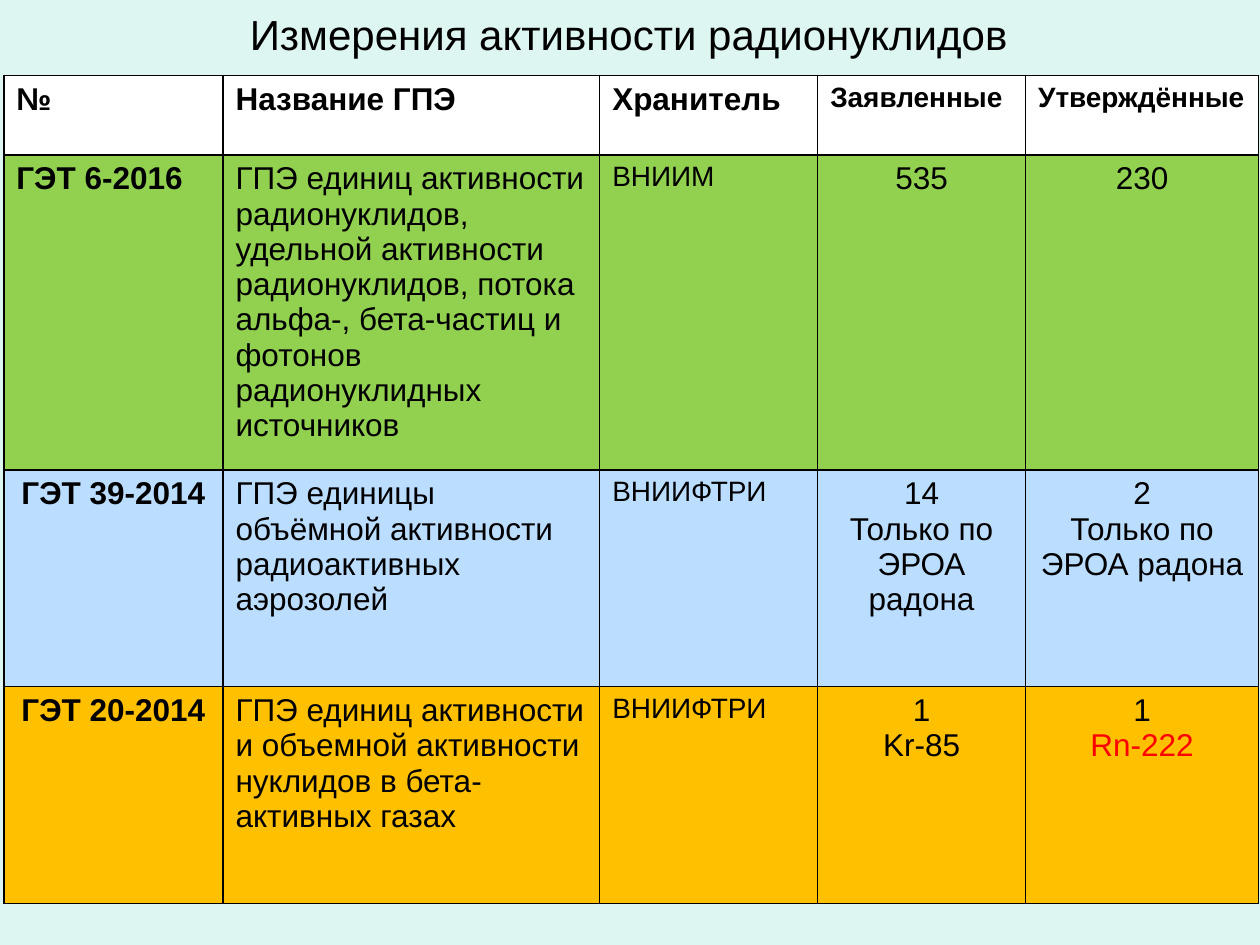
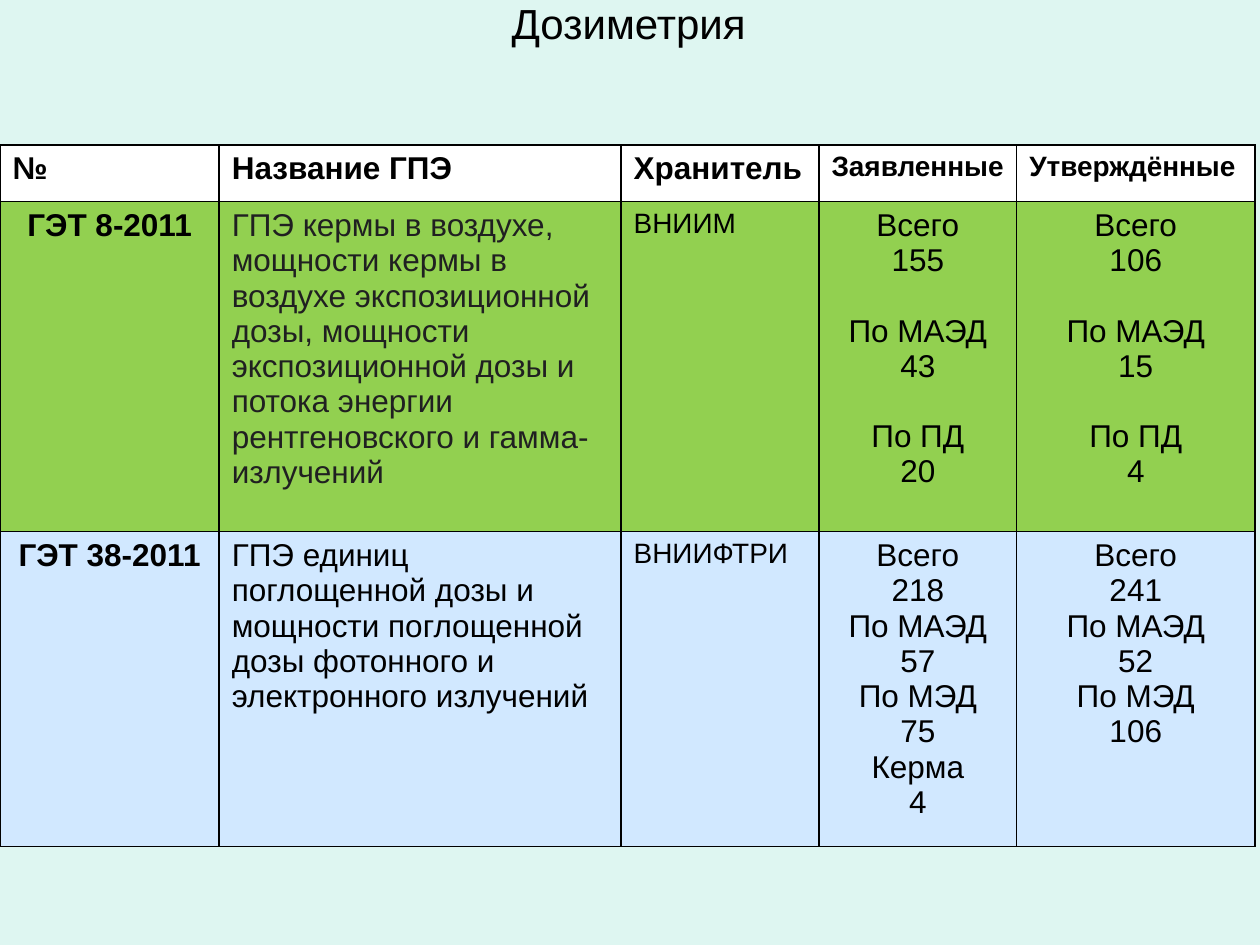
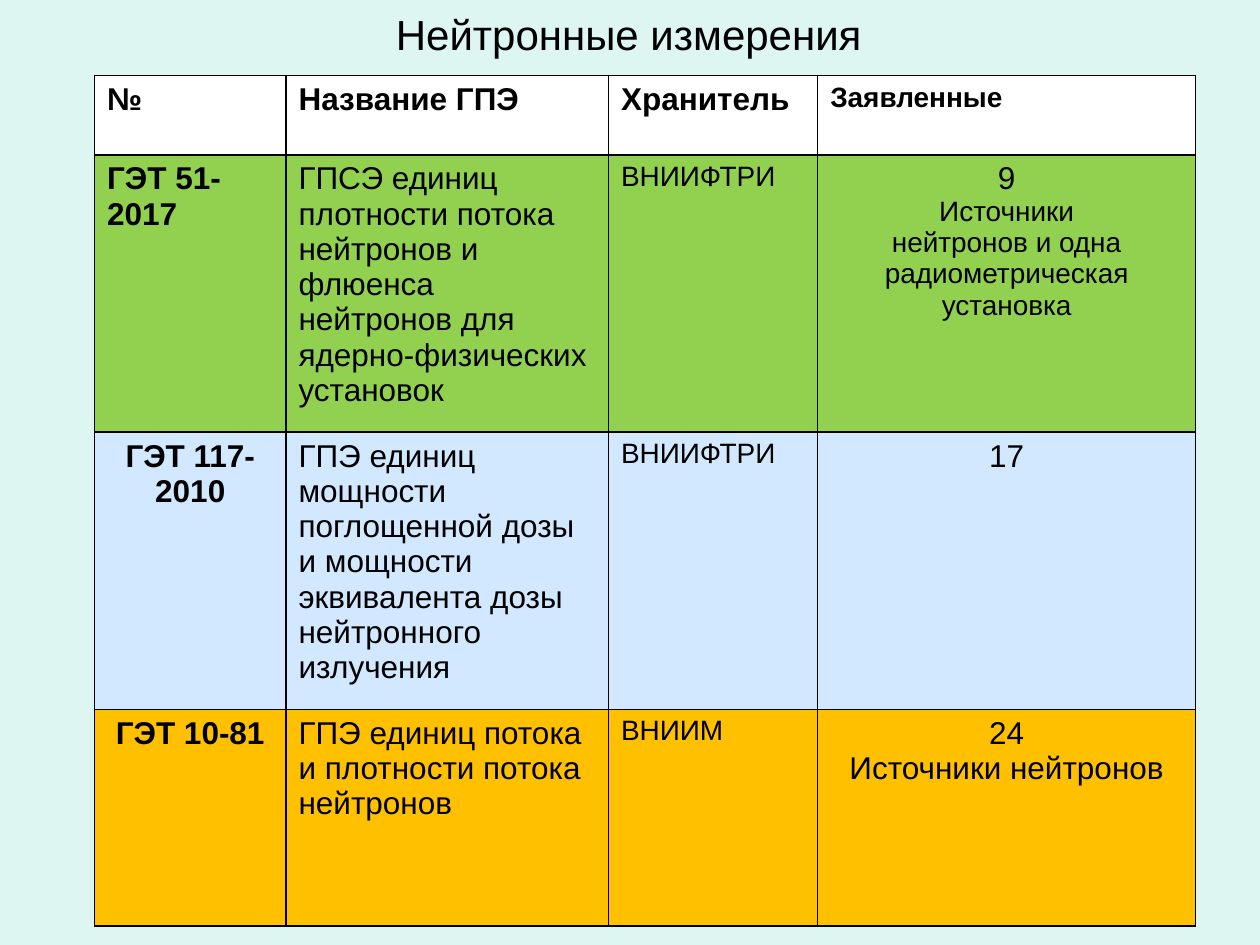
from dataclasses import dataclass
from lxml.etree import SubElement as Sub
from pptx import Presentation as Pres
from pptx.dml.color import RGBColor as Rgb
from pptx.enum.text import MSO_ANCHOR as Anchor, PP_ALIGN as Align
from pptx.oxml.ns import qn
from pptx.util import Inches, Pt


@dataclass(frozen=True)
class Theme:
    font: str = "Arial"
    back: str = "DEF6F1"
    ink: str = "000000"
    soft: str = "202021"
    red: str = "FF0000"
    white: str = "FFFFFF"
    green: str = "92D050"
    blue: str = "BBDDFF"
    pale: str = "D1E8FF"
    gold: str = "FFC000"
    title: int = 24
    text: int = 18
    small: int = 16
    gap: int = 20
    edge: int = 1


T = Theme()
COLS, ROWS = 100, 75
HEADS = ["№", "Название ГПЭ", "Хранитель", "Заявленные", "Утверждённые"]


def write(frame, text, size=T.text, ink=T.ink, bold=False, align=Align.LEFT, gap=0):
    lines = text if isinstance(text, list) else [text]
    for i, line in enumerate(lines):
        words, own = line if isinstance(line, tuple) else (line, {})
        para = frame.paragraphs[0] if i == 0 else frame.add_paragraph()
        para.alignment = align
        if own.get("gap", gap):
            para.space_before = Pt(own.get("gap", gap))
        run = para.add_run()
        run.text = words
        font = run.font
        font.name = T.font
        font.size = Pt(own.get("size", size))
        font.bold = bold
        font.color.rgb = Rgb.from_string(own.get("ink", ink))


class Deck:
    def __init__(self, theme):
        self.theme = theme
        self.pres = Pres()
        self.pres.slide_width, self.pres.slide_height = Inches(10), Inches(7.5)
        self.slide = None

    def wide(self, cols):
        return round(self.pres.slide_width * cols / COLS)

    def high(self, rows):
        return round(self.pres.slide_height * rows / ROWS)

    def page(self):
        self.slide = self.pres.slides.add_slide(self.pres.slide_layouts[6])
        fill = self.slide.background.fill
        fill.solid()
        fill.fore_color.rgb = Rgb.from_string(self.theme.back)

    def title(self, text, tall=5.4):
        box = self.slide.shapes.add_textbox(
            self.wide(4.9), 0, self.wide(90), self.high(tall))
        frame = box.text_frame
        frame.word_wrap = True
        frame.margin_top = frame.margin_bottom = 0
        frame.vertical_anchor = Anchor.MIDDLE
        write(frame, text, size=self.theme.title, align=Align.CENTER)

    def cell(self, cell, text, fill, **fmt):
        props = cell._tc.get_or_add_tcPr()
        for side in "LRTB":
            line = Sub(props, qn("a:ln" + side), w=str(Pt(self.theme.edge)))
            paint = Sub(line, qn("a:solidFill"))
            Sub(paint, qn("a:srgbClr"), val=self.theme.ink)
        cell.fill.solid()
        cell.fill.fore_color.rgb = Rgb.from_string(fill)
        write(cell.text_frame, text, **fmt)

    def table(self, left, top, cols, rows, fills, body, start=Align.LEFT, ink=T.ink):
        th = self.theme
        grid = self.slide.shapes.add_table(
            len(rows), len(cols), self.wide(left), self.high(top),
            self.wide(sum(cols)), self.high(sum(rows))).table
        grid.first_row = grid.horz_banding = False
        for col, size in zip(grid.columns, cols):
            col.width = self.wide(size)
        for row, size in zip(grid.rows, rows):
            row.height = self.high(size)
        for c, head in enumerate(HEADS[:len(cols)]):
            self.cell(grid.cell(0, c), head, th.white, bold=True,
                      size=th.small if c > 2 else th.text)
        for r, (fill, line) in enumerate(zip(fills, body), 1):
            for c, text in enumerate(line):
                align = Align.LEFT if c in (1, 2) else Align.CENTER
                self.cell(grid.cell(r, c), text, fill, bold=c == 0,
                          size=th.small if c == 2 else th.text,
                          ink=ink if (r, c) == (1, 1) else th.ink,
                          align=start if (r, c) == (1, 0) else align)


def space(text):
    return text, {"gap": T.gap}


def main():
    deck = Deck(T)

    deck.page()
    deck.title("Измерения активности радионуклидов")
    radon = "Только по ЭРОА радона"
    deck.table(0.3, 6, [17.4, 29.9, 17.3, 16.5, 18.5], [6.3, 23.4, 17.2, 17.2],
               [T.green, T.blue, T.gold], [
        ["ГЭТ 6-2016",
         "ГПЭ единиц активности радионуклидов, удельной активности радионуклидов, "
         "потока альфа-, бета-частиц и фотонов радионуклидных источников",
         "ВНИИМ", "535", "230"],
        ["ГЭТ 39-2014", "ГПЭ единицы объёмной активности радиоактивных аэрозолей",
         "ВНИИФТРИ", ["14", radon], ["2", radon]],
        ["ГЭТ 20-2014",
         "ГПЭ единиц активности и объемной активности нуклидов в бета-активных газах",
         "ВНИИФТРИ", ["1", "Kr-85"], ["1", ("Rn-222", {"ink": T.red})]],
    ])

    deck.page()
    deck.title("Дозиметрия", tall=3.6)
    deck.table(0, 11.5, [17.4, 31.9, 15.7, 15.7, 18.9], [4.5, 26.2, 23.4],
               [T.green, T.pale], [
        ["ГЭТ 8-2011",
         "ГПЭ кермы в воздухе, мощности кермы в воздухе экспозиционной дозы, "
         "мощности экспозиционной дозы и потока энергии рентгеновского "
         "и гамма- излучений",
         "ВНИИМ",
         ["Всего", "155", space("По МАЭД"), "43", space("По ПД"), "20"],
         ["Всего", "106", space("По МАЭД"), "15", space("По ПД"), "4"]],
        ["ГЭТ 38-2011",
         "ГПЭ единиц поглощенной дозы и мощности поглощенной дозы фотонного "
         "и электронного излучений",
         "ВНИИФТРИ",
         ["Всего", "218", "По МАЭД", "57", "По МЭД", "75", "Керма", "4"],
         ["Всего", "241", "По МАЭД", "52", "По МЭД", "106"]],
    ], start=Align.CENTER, ink=T.soft)

    deck.page()
    deck.title("Нейтронные измерения")
    small = {"size": T.small}
    deck.table(7.5, 6, [15.2, 25.6, 16.6, 30], [6.3, 22, 20.6, 17.2],
               [T.green, T.pale, T.gold], [
        ["ГЭТ 51-2017",
         "ГПСЭ единиц плотности потока нейтронов и флюенса нейтронов "
         "для ядерно-физических установок",
         "ВНИИФТРИ",
         ["9", ("Источники", small),
          ("нейтронов и одна радиометрическая установка", small)]],
        ["ГЭТ 117-2010",
         "ГПЭ единиц мощности поглощенной дозы и мощности эквивалента дозы "
         "нейтронного излучения",
         "ВНИИФТРИ", "17"],
        ["ГЭТ 10-81", "ГПЭ единиц потока и плотности потока нейтронов",
         "ВНИИМ", ["24", "Источники нейтронов"]],
    ])

    deck.pres.save("out.pptx")


if __name__ == "__main__":
    main()
